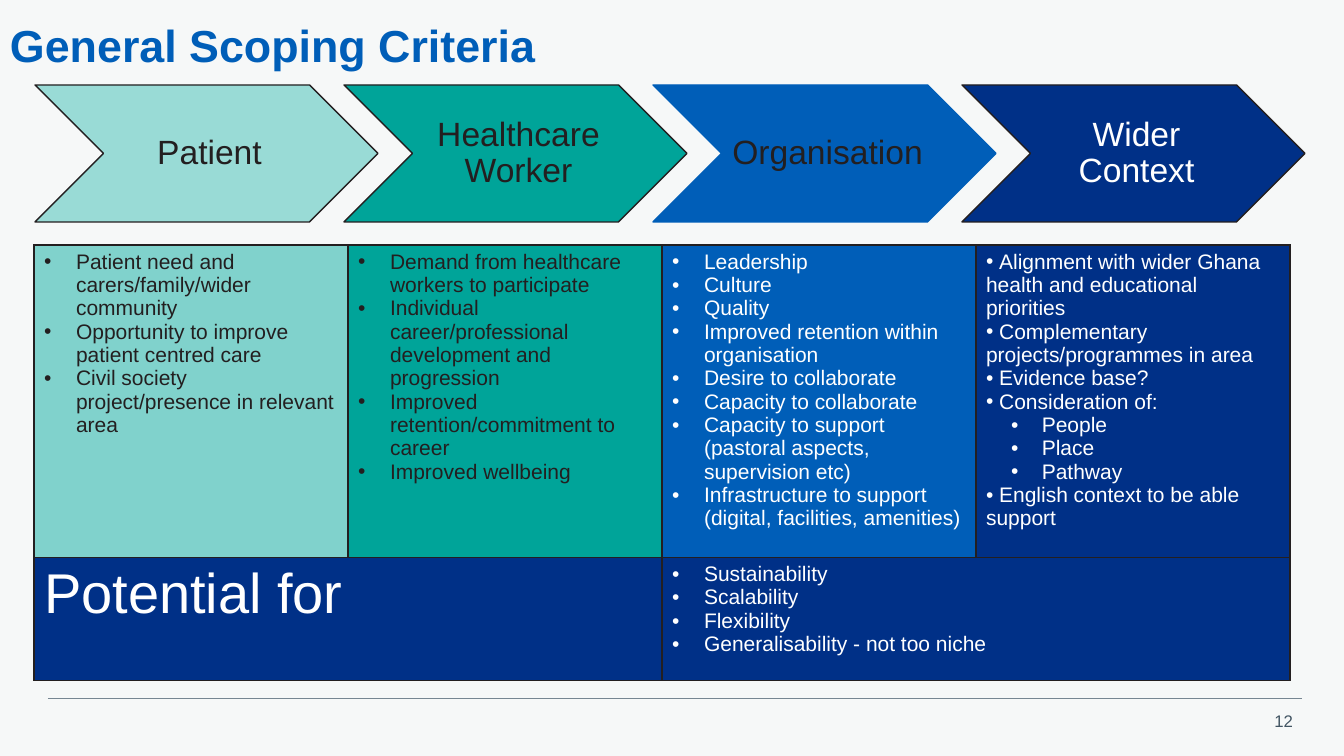
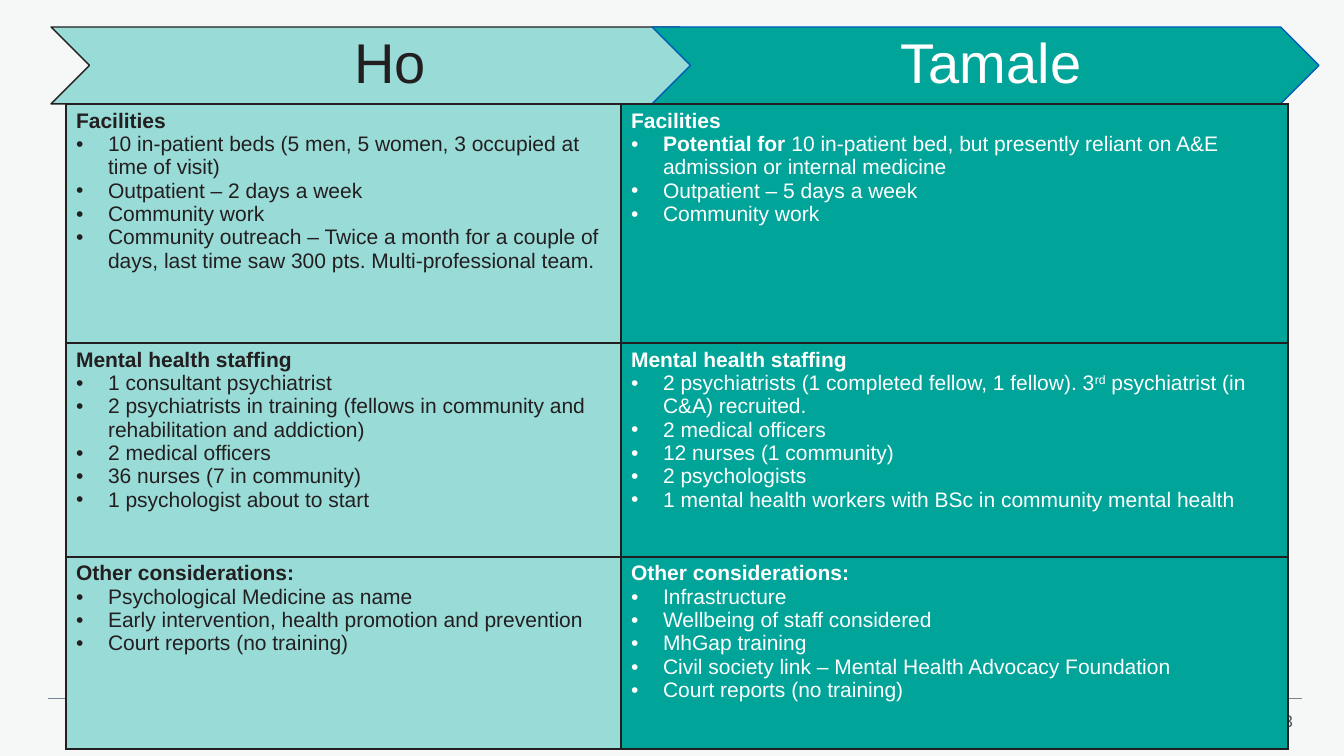
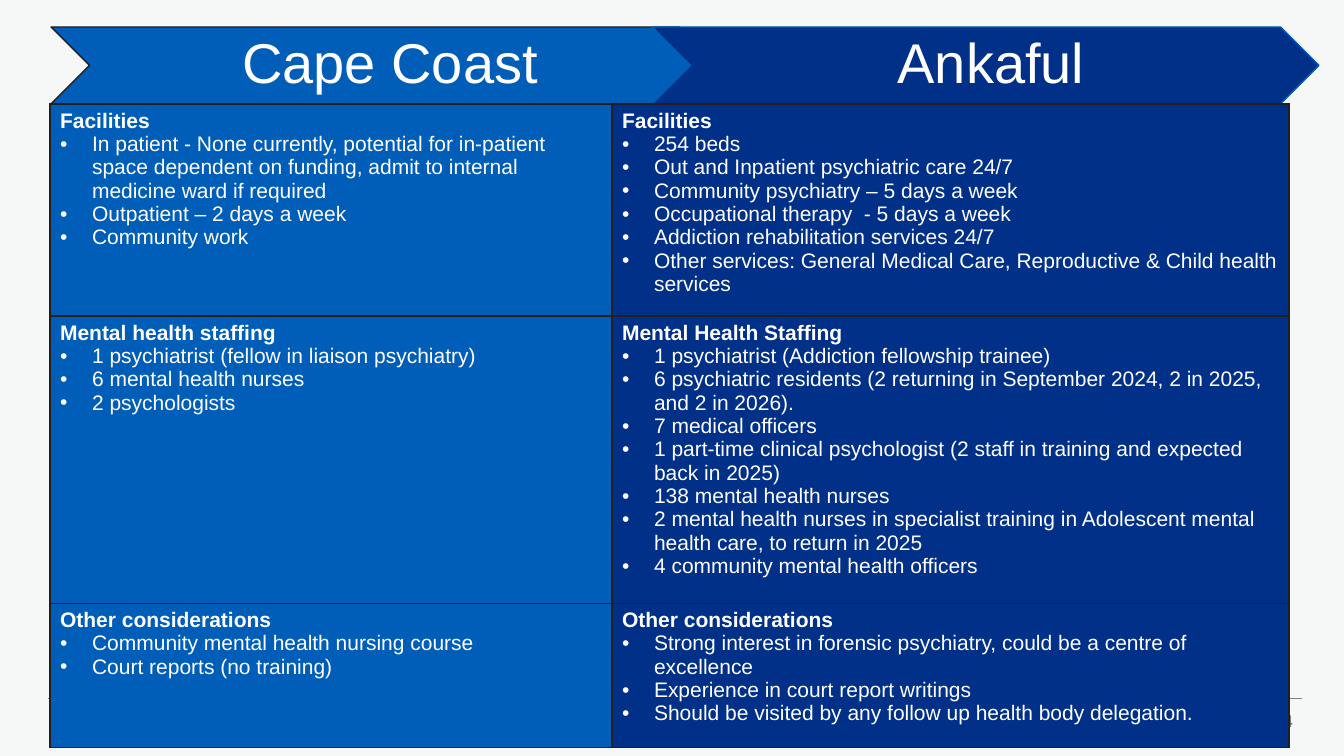
from lxml import etree
from pptx import Presentation
from pptx.dml.color import RGBColor
from pptx.enum.shapes import MSO_CONNECTOR, MSO_SHAPE
from pptx.enum.text import MSO_ANCHOR, PP_ALIGN
from pptx.oxml.ns import qn
from pptx.util import Emu, Pt

CHEVRON, STRAIGHT = MSO_SHAPE.CHEVRON, MSO_CONNECTOR.STRAIGHT
TOP, MIDDLE = MSO_ANCHOR.TOP, MSO_ANCHOR.MIDDLE
LEFT, CENTER, RIGHT = PP_ALIGN.LEFT, PP_ALIGN.CENTER, PP_ALIGN.RIGHT

# Shared style
FONT = "Arial"
INK, WHITE, PAPER = "231F20", "FFFFFF", "F6F8F8"
MINT, PALE_TEAL, TEAL = "99DBD6", "80D2CC", "00A499"
BLUE, NAVY = "005EB8", "003087"
RULE, PAGE_INK = "768692", "425563"
BODY_SIZE, BIG_SIZE = 15, 40
NBSP = chr(160)
# Left margin and first-line indent of each kind of bullet, in px
BULLETS = {"bullet": (32, -32), "tight": (0, 0), "sub": (50, -25)}

# Content: scoping criteria
SCOPING_TITLE = "General Scoping Criteria"
# label, chevron fill, chevron line, label colour
STAGES = [
    ("Patient", MINT, INK, INK),
    ("Healthcare Worker", TEAL, INK, INK),
    ("Organisation", BLUE, BLUE, INK),
    ("Wider Context", NAVY, INK, WHITE),
]
# cell fill, text colour, criteria
CRITERIA = [
    (PALE_TEAL, INK, [
        "Patient need and carers/family/wider community",
        "Opportunity to improve patient centred care",
        "Civil society project/presence in relevant area",
    ]),
    (TEAL, INK, [
        "Demand from healthcare workers to participate",
        "Individual career/professional development and progression",
        "Improved retention/commitment to career",
        "Improved wellbeing",
    ]),
    (BLUE, WHITE, [
        "Leadership",
        "Culture",
        "Quality",
        "Improved retention within organisation",
        "Desire to collaborate",
        "Capacity to collaborate",
        "Capacity to support (pastoral aspects, supervision etc)",
        "Infrastructure to support (digital, facilities, amenities)",
    ]),
]
WIDER_CRITERIA = [
    ("tight", "Alignment with wider Ghana health and educational priorities"),
    ("tight", "Complementary projects/programmes in area"),
    ("tight", "Evidence base?"),
    ("tight", "Consideration of:"),
    ("sub", "People"),
    ("sub", "Place"),
    ("sub", "Pathway"),
    ("tight", "English context to be able support"),
]
POTENTIAL = "Potential for"
POTENTIAL_ITEMS = ["Sustainability", "Scalability", "Flexibility",
                   "Generalisability - not too niche"]

# Content: sites, two a slide; an item of several runs is a list of (text, style)
SITE_SLIDES = [
    {
        "page": 13, "left": 66, "columns": [555, 667], "rows": [239, 214, 192],
        "sites": [
            ("Ho", MINT, INK, INK, [
                ("Facilities", [
                    "10 in-patient beds (5 men, 5 women, 3 occupied at time of visit)",
                    "Outpatient – 2 days a week",
                    "Community work",
                    "Community outreach – Twice a month for a couple of days, "
                    "last time saw 300 pts. Multi-professional team.",
                ]),
                ("Mental health staffing", [
                    "1 consultant psychiatrist",
                    "2 psychiatrists in training (fellows in community and "
                    "rehabilitation and addiction)",
                    "2 medical officers",
                    "36 nurses (7 in community)",
                    "1 psychologist about to start",
                ]),
                ("Other considerations:", [
                    "Psychological Medicine as name",
                    "Early intervention, health promotion and prevention",
                    "Court reports (no training)",
                ]),
            ]),
            ("Tamale", TEAL, BLUE, WHITE, [
                ("Facilities", [
                    [("Potential for", "bold"),
                     (" 10 in-patient bed, but presently reliant on A&E "
                      "admission or internal medicine", "")],
                    "Outpatient – 5 days a week",
                    "Community work",
                ]),
                ("Mental health staffing", [
                    [("2 psychiatrists (1 completed fellow, 1 fellow). 3", ""),
                     ("rd", "super"),
                     (" psychiatrist (in C&A) recruited.", "")],
                    "2 medical officers",
                    "12 nurses (1 community)",
                    "2 psychologists",
                    "1 mental health workers with BSc in community mental health",
                ]),
                ("Other considerations:", [
                    "Infrastructure",
                    "Wellbeing of staff considered",
                    "MhGap training",
                    "Civil society link – Mental Health Advocacy Foundation",
                    "Court reports (no training)",
                ]),
            ]),
        ],
    },
    {
        "page": 14, "left": 50, "columns": [562, 677], "rows": [212, 287, 144],
        "sites": [
            ("Cape Coast", BLUE, INK, WHITE, [
                ("Facilities", [
                    "In patient - None currently, potential for in-patient space "
                    "dependent on funding, admit to internal medicine ward if required",
                    "Outpatient – 2 days a week",
                    "Community work",
                ]),
                ("Mental health staffing", [
                    "1 psychiatrist (fellow in liaison psychiatry)",
                    "6 mental health nurses",
                    "2 psychologists",
                ]),
                ("Other considerations", [
                    "Community mental health nursing course",
                    "Court reports (no training)",
                ]),
            ]),
            ("Ankaful", NAVY, BLUE, WHITE, [
                ("Facilities", [
                    "254 beds",
                    "Out and Inpatient psychiatric care 24/7",
                    "Community psychiatry – 5 days a week",
                    "Occupational therapy  - 5 days a week",
                    "Addiction rehabilitation services 24/7",
                    "Other services: General Medical Care, Reproductive & Child "
                    "health services",
                ]),
                ("Mental Health Staffing", [
                    "1 psychiatrist (Addiction fellowship trainee)",
                    "6 psychiatric residents (2 returning in September 2024, "
                    "2 in 2025, and 2 in 2026).",
                    "7 medical officers",
                    "1 part-time clinical psychologist (2 staff in training and "
                    "expected back in 2025)",
                    "138 mental health nurses",
                    "2 mental health nurses in specialist training in Adolescent "
                    "mental health care, to return in 2025",
                    "4 community mental health officers",
                ]),
                ("Other considerations", [
                    "Strong interest in forensic psychiatry, could be a centre "
                    "of excellence",
                    "Experience in court report writings",
                    "Should be visited by any follow up health body delegation.",
                ]),
            ]),
        ],
    },
]


# Helpers
def px(length):
    return Emu(round(length * 914400 / 100.8))


def rgb(code):
    return RGBColor.from_string(code)


def write(paragraph, text, size=BODY_SIZE, color=INK, bold=False, align=LEFT,
          spacing=None):
    runs = [(text, "")] if isinstance(text, str) else text
    paragraph.alignment = align
    if spacing:
        paragraph.line_spacing = spacing
    for words, style in runs:
        run = paragraph.add_run()
        run.text = words
        run.font.name, run.font.size = FONT, Pt(size)
        run.font.color.rgb = rgb(color)
        run.font.bold = bold or style == "bold"
        if style == "super":
            run.font._element.set("baseline", "30000")


def add_bullet(paragraph, kind):
    margin, indent = BULLETS[kind]
    props = paragraph._p.get_or_add_pPr()
    props.set("marL", str(px(margin)))
    props.set("indent", str(px(indent)))
    etree.SubElement(props, qn("a:buFont")).set("typeface", FONT)
    etree.SubElement(props, qn("a:buChar")).set("char", "•")


def set_frame(frame, margins=(0, 0, 0, 0), anchor=TOP):
    frame.word_wrap = True
    frame.vertical_anchor = anchor
    (frame.margin_left, frame.margin_top,
     frame.margin_right, frame.margin_bottom) = map(px, margins)


def add_text(slide, box, text, anchor=TOP, **style):
    frame = slide.shapes.add_textbox(*map(px, box)).text_frame
    set_frame(frame, anchor=anchor)
    write(frame.paragraphs[0], text, **style)


def add_chevron(slide, box, label, fill, line, color, size, margins):
    chevron = slide.shapes.add_shape(CHEVRON, *map(px, box))
    chevron.shadow.inherit = False
    chevron.fill.solid()
    chevron.fill.fore_color.rgb = rgb(fill)
    chevron.line.color.rgb = rgb(line)
    chevron.line.width = Pt(1)
    set_frame(chevron.text_frame, margins, MIDDLE)
    write(chevron.text_frame.paragraphs[0], label, size=size, color=color,
          align=CENTER, spacing=0.9)


def add_grid(slide, left, top, columns, rows):
    box = map(px, (left, top, sum(columns), sum(rows)))
    table = slide.shapes.add_table(len(rows), len(columns), *box).table
    table.first_row = table.horz_banding = False
    for column, width in zip(table.columns, columns):
        column.width = px(width)
    for row, height in zip(table.rows, rows):
        row.height = px(height)
    return table


def paint_cell(cell, fill):
    cell.fill.solid()
    cell.fill.fore_color.rgb = rgb(fill)
    props = cell._tc.get_or_add_tcPr()
    for place, side in enumerate(("lnL", "lnR", "lnT", "lnB")):
        border = etree.Element(qn("a:" + side), w=str(Pt(1)))
        ink = etree.SubElement(border, qn("a:solidFill"))
        etree.SubElement(ink, qn("a:srgbClr")).set("val", INK)
        props.insert(place, border)


def fill_cell(cell, fill, color, entries, size=BODY_SIZE):
    """Entries are (kind, text); kind is heading, plain or a bullet kind."""
    paint_cell(cell, fill)
    for number, (kind, text) in enumerate(entries):
        frame = cell.text_frame
        paragraph = frame.add_paragraph() if number else frame.paragraphs[0]
        if kind in BULLETS:
            add_bullet(paragraph, kind)
        write(paragraph, text, size=size, color=color, bold=kind == "heading")


def bulleted(items):
    return [("bullet", item) for item in items]


def new_slide(prs, page):
    slide = prs.slides.add_slide(prs.slide_layouts[6])
    rule = slide.shapes.add_connector(STRAIGHT, *map(px, (48, 698, 1302, 698)))
    rule.line.color.rgb = rgb(RULE)
    rule.line.width = Pt(0.5)
    etree.SubElement(rule._element.spPr, qn("a:effectLst"))
    add_text(slide, (1242, 706, 51, 30), str(page), anchor=MIDDLE, size=12,
             color=PAGE_INK, align=RIGHT)
    return slide


# Slides
def scoping_slide(prs):
    slide = new_slide(prs, 12)
    add_text(slide, (10, 0, 1257, 96), SCOPING_TITLE, anchor=MIDDLE, size=32,
             color=BLUE, bold=True, spacing=0.9)
    for number, (label, fill, line, color) in enumerate(STAGES):
        add_chevron(slide, (35 + 309 * number, 85, 343, 137), label, fill, line,
                    color, 24, (10, 4, 4, 4))

    table = add_grid(slide, 34, 245, [314] * 4, [300, 123])
    for column, (fill, color, items) in enumerate(CRITERIA):
        fill_cell(table.cell(0, column), fill, color, bulleted(items))
    fill_cell(table.cell(0, 3), NAVY, WHITE,
              [(kind, NBSP + text) for kind, text in WIDER_CRITERIA])

    for column in (0, 2):
        table.cell(1, column).merge(table.cell(1, column + 1))
        paint_cell(table.cell(1, column + 1), NAVY)
    fill_cell(table.cell(1, 0), NAVY, WHITE, [("plain", POTENTIAL)], BIG_SIZE)
    fill_cell(table.cell(1, 2), NAVY, WHITE, bulleted(POTENTIAL_ITEMS))


def site_slide(prs, page, left, columns, rows, sites):
    slide = new_slide(prs, page)
    for number, (name, fill, line, color, _) in enumerate(sites):
        add_chevron(slide, (51 + 601 * number, 27, 667, 77), name, fill, line,
                    color, BIG_SIZE, (17, 6, 6, 6))
    table = add_grid(slide, left, 104, columns, rows)
    for column, (_, fill, _, color, sections) in enumerate(sites):
        for row, (heading, items) in enumerate(sections):
            fill_cell(table.cell(row, column), fill, color,
                      [("heading", heading)] + bulleted(items))


def main():
    prs = Presentation()
    prs.slide_width, prs.slide_height = px(1344), px(756)
    backdrop = prs.slide_master.background.fill
    backdrop.solid()
    backdrop.fore_color.rgb = rgb(PAPER)
    scoping_slide(prs)
    for content in SITE_SLIDES:
        site_slide(prs, **content)
    prs.save("out.pptx")


if __name__ == "__main__":
    main()
